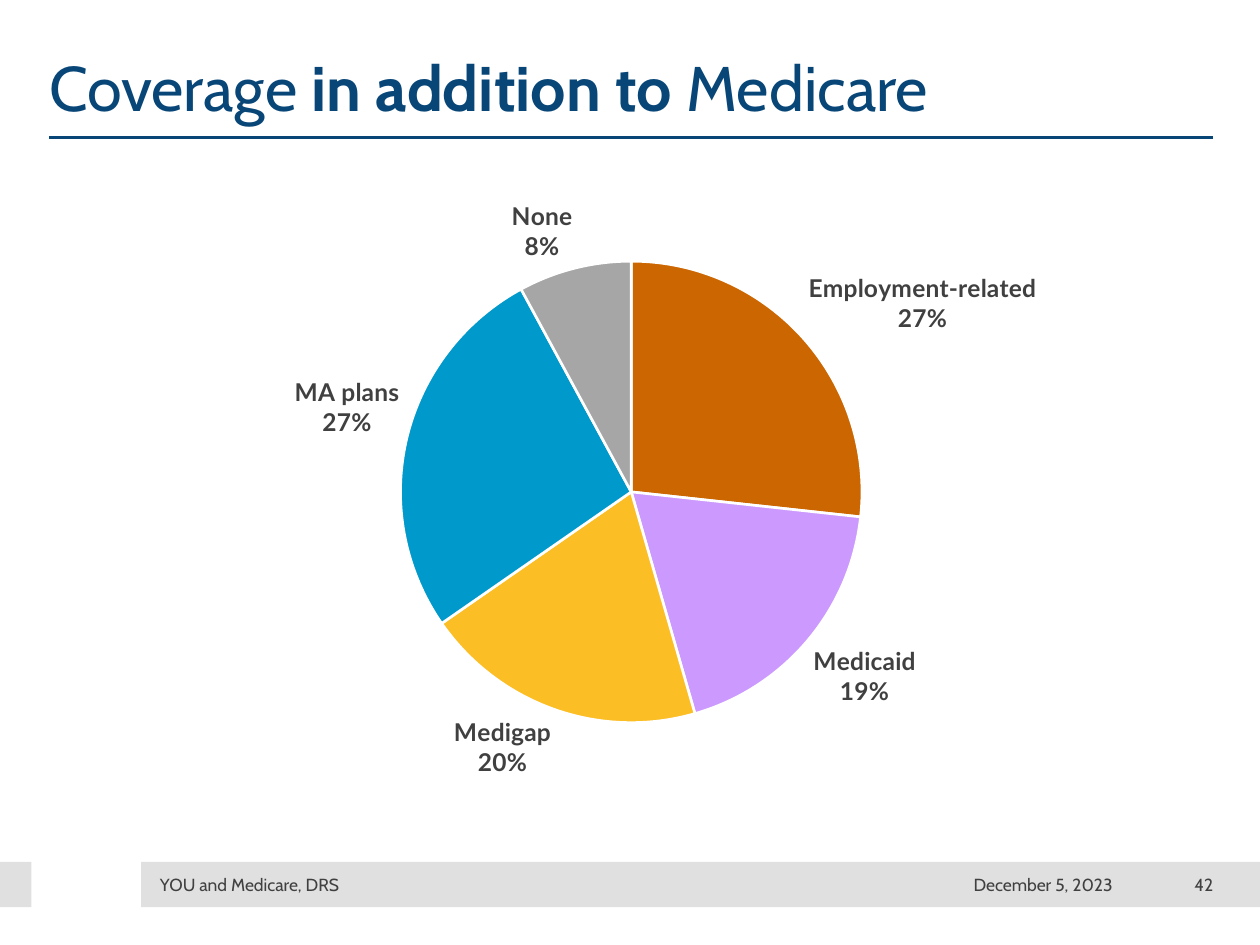
from lxml import etree
from pptx import Presentation
from pptx.chart.data import CategoryChartData
from pptx.dml.color import RGBColor
from pptx.enum import chart as ch, shapes, text
from pptx.oxml import ns
from pptx.util import Inches, Pt

NAVY, GRAY, BAND, WHITE = "084678", "404040", "E0E0E0", "FFFFFF"
LEFT, WIDTH = 0.39, 9.24
BAND_TOP, BAND_HEIGHT = 6.84, 0.36
COVERAGE = [
    ("Employment-related", 27, "CC6600"),
    ("Medicaid", 19, "CC99FF"),
    ("Medigap", 20, "FCBE25"),
    ("MA plans", 27, "0099CC"),
    ("None", 8, "A6A6A6"),
]
FOOTER = [
    ("YOU and Medicare, DRS", 1.27, 3.96, text.PP_ALIGN.LEFT),
    ("December 5, 2023", 6.5, 2.33, text.PP_ALIGN.RIGHT),
    ("42", 8.93, 0.7, text.PP_ALIGN.RIGHT),
]


def color(hex_value):
    return RGBColor.from_string(hex_value)


def set_font(font, size, hex_value, name, bold=False):
    for key, value in {"size": Pt(size), "name": name, "bold": bold}.items():
        setattr(font, key, value)
    font.color.rgb = color(hex_value)


def add_text(slide, box, runs, size, hex_value, align=text.PP_ALIGN.LEFT, spacing=1.0):
    """Add one line of (wording, bold) runs, centred vertically in the box."""
    frame = slide.shapes.add_textbox(*map(Inches, box)).text_frame
    layout = {"word_wrap": True, "vertical_anchor": text.MSO_ANCHOR.MIDDLE,
              "margin_left": 0, "margin_right": 0, "margin_top": 0, "margin_bottom": 0}
    for key, value in layout.items():
        setattr(frame, key, value)
    line = frame.paragraphs[0]
    line.alignment = align
    line.line_spacing = spacing
    for wording, bold in runs:
        run = line.add_run()
        run.text = wording
        set_font(run.font, size, hex_value, "Cabin", bold)


def add_band(slide, left, width):
    band = slide.shapes.add_shape(
        shapes.MSO_SHAPE.RECTANGLE,
        *map(Inches, (left, BAND_TOP, width, BAND_HEIGHT)))
    band.shadow.inherit = False
    band.fill.solid()
    band.fill.fore_color.rgb = color(BAND)
    band.line.fill.background()


def add_rule(slide, y):
    rule = slide.shapes.add_connector(
        shapes.MSO_CONNECTOR.STRAIGHT,
        *map(Inches, (LEFT, y, LEFT + WIDTH, y)))
    rule.line.color.rgb = color(NAVY)
    rule.line.width = Pt(2)
    etree.SubElement(rule._element.spPr, ns.qn("a:effectLst"))


def place_pie(chart, x, y, w, h):
    """Fix the plot area, in fractions of the chart frame."""
    plot_area = chart._chartSpace.chart.plotArea
    for old in plot_area.findall(ns.qn("c:layout")):
        plot_area.remove(old)
    layout = etree.Element(ns.qn("c:layout"))
    manual = etree.SubElement(layout, ns.qn("c:manualLayout"))
    settings = {"layoutTarget": "inner", "xMode": "edge", "yMode": "edge",
                "x": x, "y": y, "w": w, "h": h}
    for tag, value in settings.items():
        etree.SubElement(manual, ns.qn(f"c:{tag}")).set("val", str(value))
    plot_area.insert(0, layout)


def label_slices(plot):
    plot.has_data_labels = True
    labels = plot.data_labels
    options = {"show_category_name": True, "show_percentage": True,
               "show_value": False, "number_format": "0%",
               "number_format_is_linked": False,
               "position": ch.XL_LABEL_POSITION.OUTSIDE_END}
    for key, value in options.items():
        setattr(labels, key, value)
    set_font(labels.font, 14, GRAY, "Lato", True)
    separator = etree.Element(ns.qn("c:separator"))
    separator.text = "\n"
    last_flag = labels._element.findall(ns.qn("c:showPercent"))[0]
    bubble_flag = labels._element.find(ns.qn("c:showBubbleSize"))
    (last_flag if bubble_flag is None else bubble_flag).addnext(separator)


def add_coverage_pie(slide):
    names, shares, fills = zip(*COVERAGE)
    data = CategoryChartData()
    data.categories = names
    data.add_series("Series 1", shares)
    chart = slide.shapes.add_chart(
        ch.XL_CHART_TYPE.PIE, *map(Inches, (LEFT, 1.43, WIDTH, 4.95)), data).chart
    chart.has_legend = False
    chart.has_title = False
    set_font(chart.font, 10, "000000", "Lato")
    plot = chart.plots[0]
    plot.vary_by_categories = True
    for index, fill in enumerate(fills):
        piece = plot.series[0].points[index].format
        piece.fill.solid()
        piece.fill.fore_color.rgb = color(fill)
        piece.line.color.rgb = color(WHITE)
        piece.line.width = Pt(1.5)
    label_slices(plot)
    place_pie(chart, 0.3, 0.13, 0.4, 0.74)


def main():
    deck = Presentation()
    deck.slide_width, deck.slide_height = Inches(10), Inches(7.5)
    slide = deck.slides.add_slide(deck.slide_layouts[6])
    add_band(slide, 1.12, 8.88)
    add_band(slide, 0, 0.25)
    add_rule(slide, 1.09)
    title = [("Coverage ", False), ("in addition to ", True), ("Medicare", False)]
    add_text(slide, (LEFT, 0.36, WIDTH, 0.73), title, 36, NAVY, spacing=0.9)
    add_coverage_pie(slide)
    for wording, left, width, align in FOOTER:
        add_text(slide, (left, 6.91, width, 0.22), [(wording, False)], 10, GRAY, align)
    deck.save("out.pptx")


if __name__ == "__main__":
    main()
